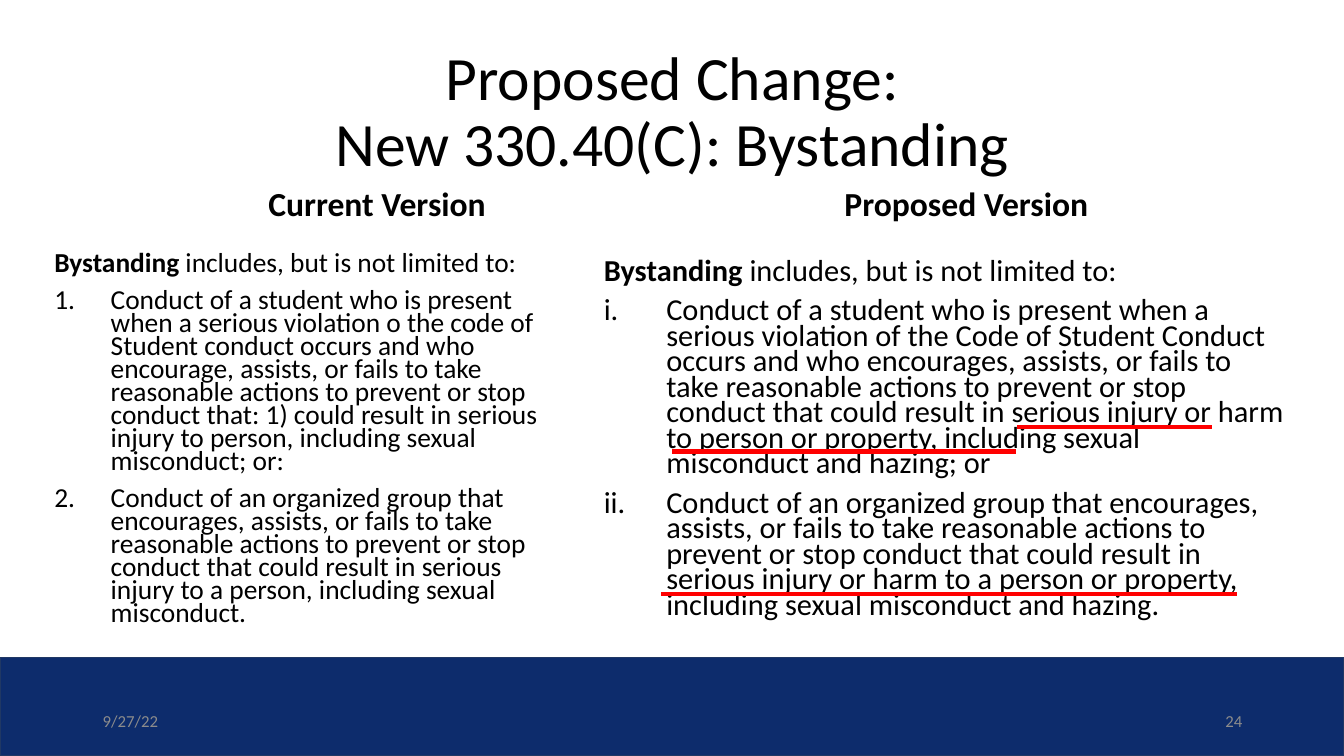
from dataclasses import dataclass

from lxml import etree
from pptx import Presentation
from pptx.dml.color import RGBColor
from pptx.enum.shapes import MSO_CONNECTOR, MSO_SHAPE
from pptx.enum.text import MSO_ANCHOR, PP_ALIGN
from pptx.oxml.ns import qn
from pptx.util import Inches, Pt

LEFT, CENTER, RIGHT = PP_ALIGN.LEFT, PP_ALIGN.CENTER, PP_ALIGN.RIGHT
MIDDLE = MSO_ANCHOR.MIDDLE
RECTANGLE = MSO_SHAPE.RECTANGLE
STRAIGHT = MSO_CONNECTOR.STRAIGHT

COLORS = {
    "text": "000000",
    "footer": "8C8C8C",
    "band": "0D2C6C",
    "band_edge": "203864",
    "underline": "FF0000",
}
FONT = "Calibri"


@dataclass(frozen=True)
class Span:
    text: str
    bold: bool = False


@dataclass(frozen=True)
class Paragraph:
    spans: tuple[Span, ...]
    numbering: str = ""


@dataclass(frozen=True)
class TextBlock:
    left: float
    top: float
    width: float
    height: float
    paragraphs: tuple[Paragraph, ...]
    size: float
    spacing: float = 1.0
    align: PP_ALIGN = LEFT
    color: str = "text"
    indent: float = 0


@dataclass(frozen=True)
class Underline:
    start: float
    end: float
    y: float


def plain(text: str, bold: bool = False) -> tuple[Paragraph, ...]:
    return (Paragraph((Span(text, bold),)),)


def definition(numbering: str, *items: str) -> tuple[Paragraph, ...]:
    intro = Paragraph((
        Span("Bystanding", True),
        Span(" includes, but is not limited to:"),
    ))
    return (intro, *(Paragraph((Span(item),), numbering) for item in items))


TEXT_BLOCKS = (
    TextBlock(0.92, 0.4, 11.5, 1.45,
              plain("Proposed Change:\nNew 330.40(C): Bystanding"),
              44, 0.9, CENTER),
    TextBlock(6.75, 1.59, 5.67, 0.9, plain("Proposed Version", True), 24, 0.9, CENTER),
    TextBlock(0.92, 1.59, 5.64, 0.9, plain("Current Version", True), 24, 0.9, CENTER),
    TextBlock(5.89, 2.22, 7, 4.3, definition(
        "romanLcPeriod",
        "Conduct of a student who is present when a serious violation of the Code of "
        "Student Conduct occurs and who encourages, assists, or fails to take "
        "reasonable actions to prevent or stop conduct that could result in serious "
        "injury or harm to person or property, including sexual misconduct and "
        "hazing; or",
        "Conduct of an organized group that encourages, assists, or fails to take "
        "reasonable actions to prevent or stop conduct that could result in serious "
        "injury or harm to a person or property, including sexual misconduct and "
        "hazing.",
    ), 21.7, 0.7, indent=0.62),
    TextBlock(0.44, 2.22, 5.2, 4.3, definition(
        "arabicPeriod",
        "Conduct of a student who is present when a serious violation o the code of "
        "Student conduct occurs and who encourage, assists, or fails to take "
        "reasonable actions to prevent or stop conduct that: 1) could result in "
        "serious injury to person, including sexual misconduct; or:",
        "Conduct of an organized group that encourages, assists, or fails to take "
        "reasonable actions to prevent or stop conduct that could result in serious "
        "injury to a person, including sexual misconduct.",
    ), 19.6, 0.7, indent=0.56),
    TextBlock(0.92, 6.95, 3, 0.4, plain("9/27/22"), 12, color="footer"),
    TextBlock(9.42, 6.95, 3, 0.4, plain("24"), 12, align=RIGHT, color="footer"),
)

UNDERLINES = (
    Underline(6.67, 10.08, 4.48),
    Underline(6.56, 12.27, 5.89),
    Underline(10.09, 12.02, 4.24),
)


def apply_format(target, values: dict) -> None:
    for name, value in values.items():
        setattr(target, name, value)


def rgb(name: str) -> RGBColor:
    return RGBColor.from_string(COLORS[name])


def add_numbering(para, scheme: str, indent: float) -> None:
    properties = para._p.get_or_add_pPr()
    properties.set("marL", str(Inches(indent)))
    properties.set("indent", str(-Inches(indent)))
    etree.SubElement(properties, qn("a:buFont"), typeface="+mj-lt")
    etree.SubElement(properties, qn("a:buAutoNum"), type=scheme)


def add_span(para, span: Span, block: TextBlock) -> None:
    for index, line in enumerate(span.text.split("\n")):
        if index:
            para.add_line_break()
        run = para.add_run()
        run.text = line
        apply_format(run.font, {"name": FONT, "size": Pt(block.size), "bold": span.bold})
        run.font.color.rgb = rgb(block.color)


def add_text_block(page, block: TextBlock) -> None:
    box = page.shapes.add_textbox(Inches(block.left), Inches(block.top),
                                  Inches(block.width), Inches(block.height))
    frame = box.text_frame
    apply_format(frame, {"word_wrap": True, "vertical_anchor": MIDDLE})
    for index, paragraph in enumerate(block.paragraphs):
        para = frame.add_paragraph() if index else frame.paragraphs[0]
        if paragraph.numbering:
            add_numbering(para, paragraph.numbering, block.indent)
        apply_format(para, {
            "alignment": block.align,
            "line_spacing": block.spacing,
            "space_before": Pt(10 if index else 0),
        })
        for span in paragraph.spans:
            add_span(para, span, block)


def add_band(page) -> None:
    band = page.shapes.add_shape(RECTANGLE, 0, Inches(6.52), Inches(13.33), Inches(0.98))
    band.shadow.inherit = False
    band.fill.solid()
    band.fill.fore_color.rgb = rgb("band")
    band.line.color.rgb = rgb("band_edge")
    band.line.width = Pt(1)


def add_underline(page, underline: Underline) -> None:
    y = Inches(underline.y)
    line = page.shapes.add_connector(STRAIGHT, Inches(underline.start), y,
                                     Inches(underline.end), y)
    line.line.color.rgb = rgb("underline")
    line.line.width = Pt(3)
    etree.SubElement(line._element.spPr, qn("a:effectLst"))


def main() -> None:
    deck = Presentation()
    apply_format(deck, {"slide_width": Inches(13.33), "slide_height": Inches(7.5)})
    page = deck.slides.add_slide(deck.slide_layouts[6])
    add_band(page)
    for block in TEXT_BLOCKS:
        add_text_block(page, block)
    for underline in UNDERLINES:
        add_underline(page, underline)
    deck.save("out.pptx")


if __name__ == "__main__":
    main()
